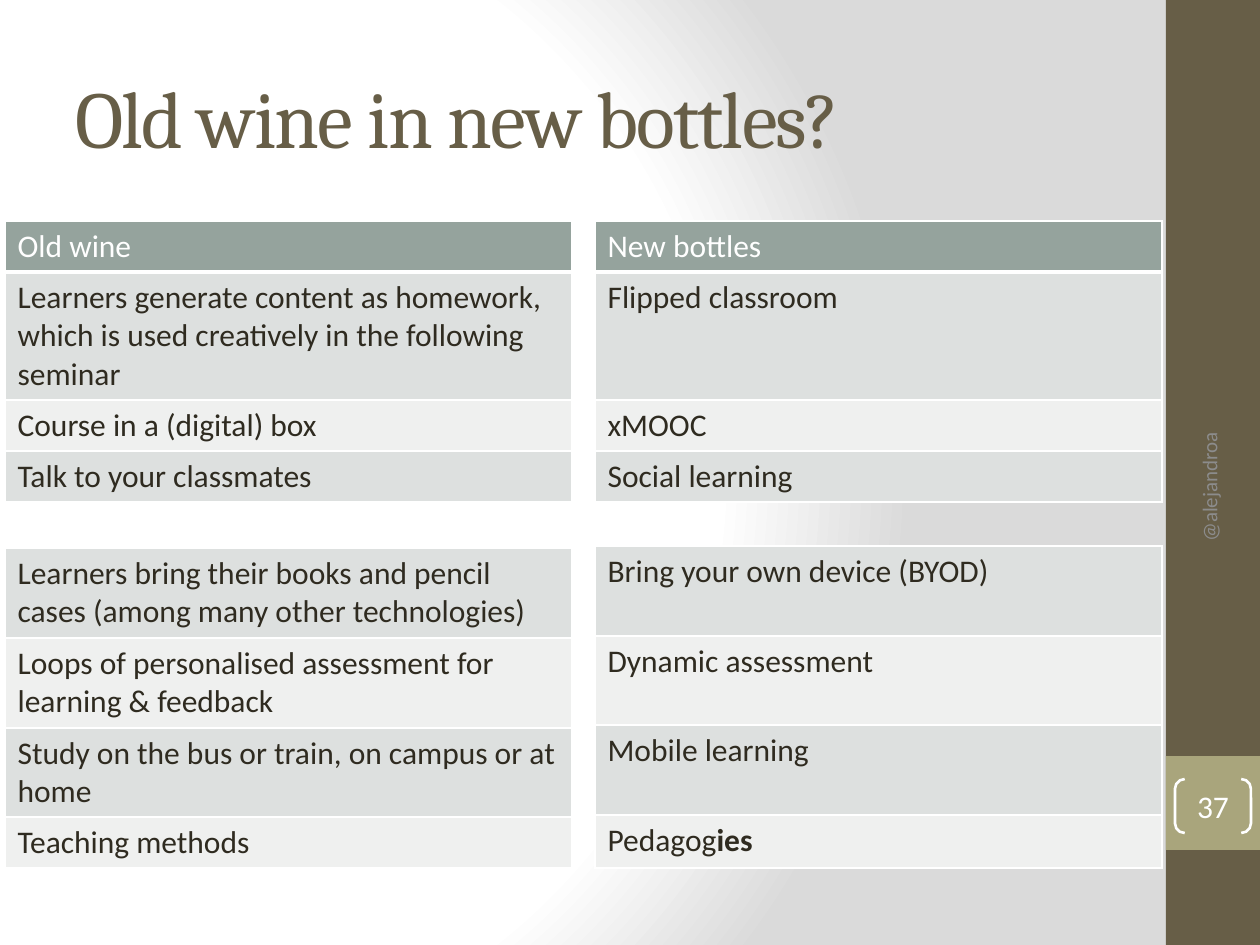
from lxml import etree
from pptx import Presentation
from pptx.dml.color import RGBColor
from pptx.enum.shapes import MSO_SHAPE as SHAPE
from pptx.enum.text import MSO_ANCHOR as ANCHOR, PP_ALIGN as ALIGN
from pptx.oxml import parse_xml
from pptx.oxml.ns import nsdecls, qn
from pptx.util import Pt

PX = 914400 / 126
WHITE, INK, HEADER = "FFFFFF", "2F2B20", "95A39D"
BROWN, OLIVE, GRAY = "675E47", "A9A57C", "8C8C8C"
BANDS = ("DDE0DF", "EFF0EF")
GRADIENT_STOPS = ((0, WHITE), (75, WHITE), (100, "DADADA"))
TABLE_WIDTH = 567
LEFT_X, RIGHT_X = 5, 595

# Each table: left, top, row heights, has a header, rows of text
TABLES = (
    (LEFT_X, 221, (51, 128, 51, 51), True, (
        "Old wine",
        "Learners generate content as homework, which is used creatively "
        "in the following seminar",
        "Course in a (digital) box",
        "Talk to your classmates")),
    (RIGHT_X, 221, (51, 128, 51, 51), True, (
        "New bottles", "Flipped classroom", "xMOOC", "Social learning")),
    (LEFT_X, 548, (90, 90, 89, 51), False, (
        "Learners bring their books and pencil cases "
        "(among many other technologies)",
        "Loops of personalised assessment for learning & feedback",
        "Study on the bus or train, on campus or at home",
        "Teaching methods")),
    (RIGHT_X, 546, (90, 89, 90, 53), False, (
        "Bring your own device (BYOD)", "Dynamic assessment",
        "Mobile learning", ("Pedagog", "ies"))),
)


def px(*lengths):
    return [round(length * PX) for length in lengths]


def color(value):
    return RGBColor.from_string(value)


def add_run(paragraph, text, font_color, **font_format):
    run = paragraph.add_run()
    run.text = text
    run.font.color.rgb = color(font_color)
    values = {"name": "Calibri", "size": Pt(18), **font_format}
    for name, value in values.items():
        setattr(run.font, name, value)
    return run


def set_frame(shape, align, **frame_format):
    frame = shape.text_frame
    values = {"word_wrap": True, "vertical_anchor": ANCHOR.MIDDLE,
              **frame_format}
    for name, value in values.items():
        setattr(frame, name, value)
    frame.paragraphs[0].alignment = align
    return frame.paragraphs[0]


def add_text(slide, box, align=ALIGN.LEFT, rotation=0):
    shape = slide.shapes.add_textbox(*px(*box))
    shape.rotation = rotation
    return set_frame(shape, align)


def add_block(slide, box, fill):
    shape = slide.shapes.add_shape(SHAPE.RECTANGLE, *px(*box))
    shape.shadow.inherit = False
    shape.fill.solid()
    shape.fill.fore_color.rgb = color(fill)
    shape.line.fill.background()


def add_page_number(slide, box, number):
    shape = slide.shapes.add_shape(SHAPE.DOUBLE_BRACKET, *px(*box))
    shape.shadow.inherit = False
    shape.adjustments[0] = 0.18
    shape.fill.background()
    shape.line.color.rgb = color(WHITE)
    shape.line.width = Pt(1.5)
    margins = {f"margin_{side}": 0
               for side in ("left", "top", "right", "bottom")}
    add_run(set_frame(shape, ALIGN.CENTER, **margins), number, WHITE)


def set_borders(cell, bottom_width):
    properties = cell._tc.get_or_add_tcPr()
    for index, side in enumerate("LRTB"):
        width = Pt(bottom_width if side == "B" else 1)
        properties.insert(index, parse_xml(
            f'<a:ln{side} {nsdecls("a")} w="{width}"><a:solidFill>'
            f'<a:srgbClr val="{WHITE}"/></a:solidFill></a:ln{side}>'))


def add_table(slide, left, top, heights, has_header, rows):
    box = px(left, top, TABLE_WIDTH, sum(heights))
    table = slide.shapes.add_table(len(rows), 1, *box).table
    table.first_row = table.horz_banding = False
    for index, (height, text) in enumerate(zip(heights, rows)):
        table.rows[index].height = px(height)[0]
        cell = table.cell(index, 0)
        is_header = has_header and index == 0
        cell.fill.solid()
        cell.fill.fore_color.rgb = color(
            HEADER if is_header else BANDS[(index - has_header) % 2])
        set_borders(cell, 3 if is_header else 1)
        # A second part of a cell's text is bold
        parts = (text,) if isinstance(text, str) else text
        for position, part in enumerate(parts):
            add_run(cell.text_frame.paragraphs[0], part,
                    WHITE if is_header else INK, bold=position > 0)


def set_background(slide):
    fill = slide.background.fill
    fill.gradient()
    gradient = next(slide.element.iter(qn("a:gradFill")))
    for child in list(gradient):
        gradient.remove(child)
    stops = etree.SubElement(gradient, qn("a:gsLst"))
    for position, value in GRADIENT_STOPS:
        stop = etree.SubElement(stops, qn("a:gs"), pos=str(position * 1000))
        etree.SubElement(stop, qn("a:srgbClr"), val=value)
    circle = etree.SubElement(gradient, qn("a:path"), {"path": "circle"})
    etree.SubElement(circle, qn("a:fillToRect"),
                     l="20000", t="50000", r="100000", b="50000")


def main():
    presentation = Presentation()
    presentation.slide_width, presentation.slide_height = px(1260, 945)
    slide = presentation.slides.add_slide(presentation.slide_layouts[6])
    set_background(slide)

    # Side band
    add_block(slide, (1166, 0, 94, 945), BROWN)
    add_block(slide, (1166, 756, 94, 94), OLIVE)

    # Title with tightened letters
    title = add_run(add_text(slide, (63, 38, 1050, 157)),
                    "Old wine in new bottles?", BROWN,
                    name="Cambria", size=Pt(46))
    title.font._element.set("spc", "-100")

    # Paired tables
    for table in TABLES:
        add_table(slide, *table)

    # Page number and vertical footer
    add_page_number(slide, (1175, 779, 76, 54), "37")
    footer = add_text(slide, (1046, 558, 326, 50), ALIGN.RIGHT, 270)
    add_run(footer, "@alejandroa", GRAY, size=Pt(12))

    presentation.save("out.pptx")


if __name__ == "__main__":
    main()
